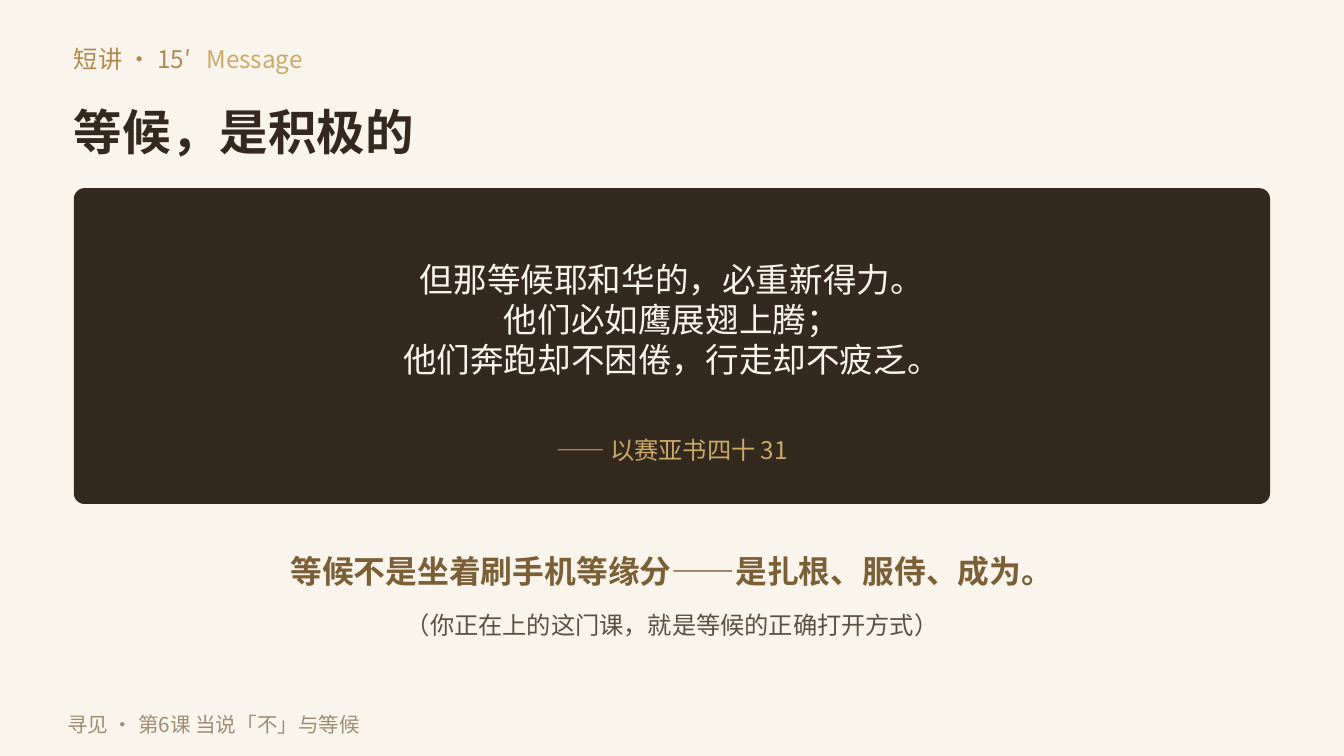
import pptx
import pptx.dml.color
import pptx.enum.shapes
import pptx.enum.text
import pptx.oxml.ns
import pptx.util
from lxml import etree

Pt = pptx.util.Pt
ALIGN = pptx.enum.text.PP_ALIGN
FONT = "Noto Sans CJK SC"
CREAM, DARK, GOLD = "FAF5EC", "33291E", "CBA968"
MARGIN, WIDTH = 39.6, 640.8


def color(hex_string):
    return pptx.dml.color.RGBColor.from_string(hex_string)


def add_run(p, text, size, rgb, bold=False):
    r = p.add_run()
    r.text = text
    for name, value in {"name": FONT, "size": Pt(size), "bold": bold}.items():
        setattr(r.font, name, value)
    r.font.color.rgb = color(rgb)
    etree.SubElement(r.font._element, pptx.oxml.ns.qn("a:ea"), typeface=FONT)


def place(sp, box):
    for name, value in zip(("left", "top", "width", "height"), box):
        setattr(sp, name, Pt(value))


def write(sp, lines, size, rgb, align=ALIGN.LEFT, bold=False):
    """Fill a text shape, one paragraph a line, without insets."""
    tf = sp.text_frame
    formats = {
        "margin_left": 0, "margin_top": 0, "margin_right": 0, "margin_bottom": 0,
        "word_wrap": True,
        "auto_size": pptx.enum.text.MSO_AUTO_SIZE.NONE,
        "vertical_anchor": pptx.enum.text.MSO_ANCHOR.MIDDLE,
    }
    for name, value in formats.items():
        setattr(tf, name, value)
    for i, line in enumerate(lines):
        p = tf.add_paragraph() if i else tf.paragraphs[0]
        p.alignment = align
        add_run(p, line, size, rgb, bold)
    return tf


def add_text(s, box, lines, size, rgb, align=ALIGN.LEFT, bold=False):
    sp = s.shapes.add_textbox(*map(Pt, box))
    return write(sp, lines, size, rgb, align, bold)


def add_header(s, box):
    x, y, w, h = box
    tf = add_text(s, (x, y, w, 23), ["短讲 · 15′\t"], 13, "B0894F")
    p = tf.paragraphs[0]
    tabs = etree.SubElement(p._p.get_or_add_pPr(), pptx.oxml.ns.qn("a:tabLst"))
    etree.SubElement(tabs, pptx.oxml.ns.qn("a:tab"), pos=str(Pt(71)), algn="l")
    add_run(p, "Message", 13, GOLD)

    title = s.shapes.title
    place(title, (x, y + h - 32.4, w, 32.4))
    write(title, ["等候，是积极的"], 26, DARK, bold=True)


def add_scripture(s, box):
    x, y, w, h = box
    card = s.shapes.add_shape(
        pptx.enum.shapes.MSO_SHAPE.ROUNDED_RECTANGLE, *map(Pt, box))
    card.adjustments[0] = 0.034
    card.shadow.inherit = False
    card.fill.solid()
    card.fill.fore_color.rgb = color(DARK)
    card.line.fill.background()

    pad = 28.8
    verse = ["但那等候耶和华的，必重新得力。",
             "他们必如鹰展翅上腾；",
             "他们奔跑却不困倦，行走却不疲乏。"]
    add_text(s, (x + pad, y + 21.6, w - 2 * pad, 97.2), verse, 18, CREAM, ALIGN.CENTER)
    add_text(s, (x + pad, y + h - 39.6, w - 2 * pad, 21.6),
             ["—— 以赛亚书四十 31"], 13, GOLD, ALIGN.CENTER)


def add_takeaway(s, box):
    x, y, w, h = box
    add_text(s, (x, y, w, 28.8), ["等候不是坐着刷手机等缘分——是扎根、服侍、成为。"],
             17, "7A5F37", ALIGN.CENTER, bold=True)
    add_text(s, (x, y + h - 21.6, w, 21.6), ["（你正在上的这门课，就是等候的正确打开方式）"],
             13, "5C5043", ALIGN.CENTER)


def main():
    prs = pptx.Presentation()
    prs.slide_width, prs.slide_height = Pt(720), Pt(405)
    s = prs.slides.add_slide(prs.slide_layouts[5])
    s.background.fill.solid()
    s.background.fill.fore_color.rgb = color(CREAM)

    add_header(s, (MARGIN, 20.2, WIDTH, 66.2))
    add_scripture(s, (MARGIN, 100.8, WIDTH, 169.2))
    add_takeaway(s, (MARGIN, 291.6, WIDTH, 54))
    add_text(s, (36, 378, 540, 20.2), ["寻见 · 第6课 当说「不」与等候"], 11, "9C8E76")
    prs.save("out.pptx")


if __name__ == "__main__":
    main()
